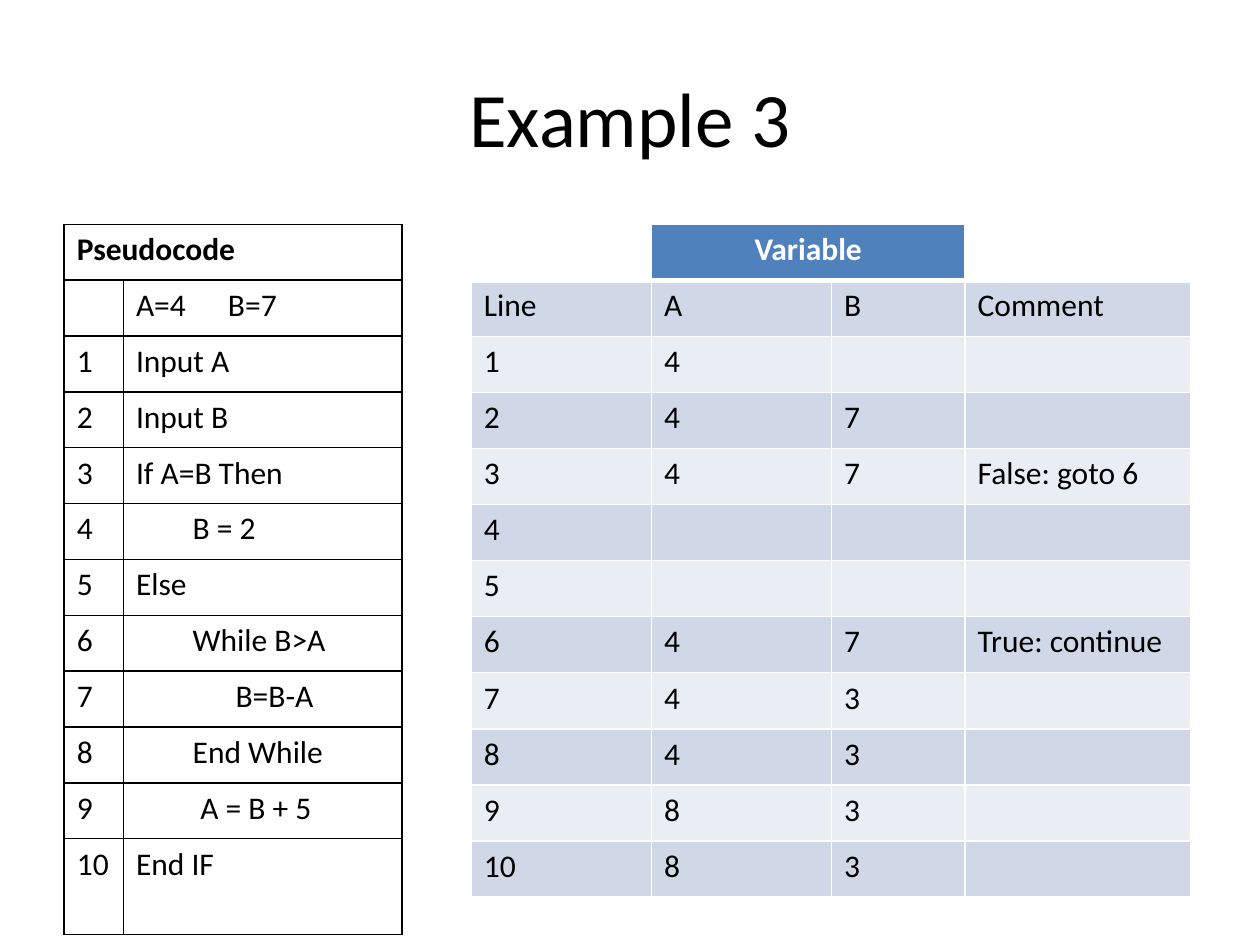
from lxml.etree import SubElement
from pptx import Presentation
from pptx.dml.color import RGBColor
from pptx.enum.text import MSO_ANCHOR, PP_ALIGN
from pptx.oxml.ns import qn
from pptx.util import Inches, Pt

FONT = "Calibri"
BLACK, WHITE, BLUE = "000000", "FFFFFF", "4F81BD"
BANDS = ["E9EDF4", "D0D8E8"]


def write(paragraph, text, size, color, bold=False):
    run = paragraph.add_run()
    run.text = text
    run.font.name, run.font.size, run.font.bold = FONT, Pt(size), bold
    run.font.color.rgb = RGBColor.from_string(color)


def paint(cell, fill, line, top=1, bottom=1):
    """Fill a cell and draw its four borders; top and bottom are widths in points."""
    cell.fill.solid()
    cell.fill.fore_color.rgb = RGBColor.from_string(fill)
    properties = cell._tc.get_or_add_tcPr()
    for place, (side, width) in enumerate([("L", 1), ("R", 1), ("T", top), ("B", bottom)]):
        border = SubElement(properties, qn(f"a:ln{side}"), w=str(Pt(width)))
        solid = SubElement(border, qn("a:solidFill"))
        SubElement(solid, qn("a:srgbClr"), val=line)
        properties.insert(place, border)  # borders come before the fill


prs = Presentation()
prs.slide_width, prs.slide_height = Inches(10), Inches(7.5)
slide = prs.slides.add_slide(prs.slide_layouts[5])

title = slide.shapes.title
title.left, title.top = Inches(0.5), Inches(0.3)
title.width, title.height = Inches(9), Inches(1.25)
title.text_frame.vertical_anchor = MSO_ANCHOR.MIDDLE
heading = title.text_frame.paragraphs[0]
heading.alignment = PP_ALIGN.CENTER
write(heading, "Example 3", 44, BLACK)

TABLES_TOP = Inches(1.78)

# Trace table: values of the variables after each line
trace = [
    ["", "Variable", "", ""],
    ["Line", "A", "B", "Comment"],
    ["1", "4", "", ""],
    ["2", "4", "7", ""],
    ["3", "4", "7", "False: goto 6"],
    ["4", "", "", ""],
    ["5", "", "", ""],
    ["6", "4", "7", "True: continue"],
    ["7", "4", "3", ""],
    ["8", "4", "3", ""],
    ["9", "8", "3", ""],
    ["10", "8", "3", ""],
]
trace_table = slide.shapes.add_table(
    len(trace), 4, Inches(3.74), TABLES_TOP, Inches(5.71), Inches(5.34)).table
for column, width in zip(trace_table.columns, [1.43, 1.43, 1.06, 1.79]):
    column.width = Inches(width)
for r, values in enumerate(trace):
    for c, value in enumerate(values):
        cell = trace_table.cell(r, c)
        if r == 0:
            paint(cell, BLUE if c in (1, 2) else WHITE, WHITE, bottom=3)
        else:
            paint(cell, BANDS[r % 2], WHITE, top=3 if r == 1 else 1)
        if value:
            write(cell.text_frame.paragraphs[0], value, 18,
                  BLACK if r else WHITE, bold=r == 0)
trace_table.cell(0, 1).merge(trace_table.cell(0, 2))
trace_table.cell(0, 1).text_frame.paragraphs[0].alignment = PP_ALIGN.CENTER

# Pseudocode: line number, statement, indent in inches
pseudocode = [
    ("Pseudocode", "", 0),
    ("", "A=4\tB=7", 0),
    ("1", "Input A", 0),
    ("2", "Input B", 0),
    ("3", "If A=B Then", 0),
    ("4", "B = 2", 0.45),
    ("5", "Else", 0),
    ("6", "While B>A", 0.45),
    ("7", "B=B-A", 0.79),
    ("8", "End While", 0.45),
    ("9", "A = B + 5", 0.51),
    ("10", "End IF", 0),
]
code_table = slide.shapes.add_table(
    len(pseudocode), 2, Inches(0.51), TABLES_TOP, Inches(2.68), Inches(5.64)).table
for column, width in zip(code_table.columns, [0.47, 2.21]):
    column.width = Inches(width)
last_height = Inches(0.76)
for row in code_table.rows:
    row.height = (Inches(5.64) - last_height) // (len(pseudocode) - 1)
code_table.rows[len(pseudocode) - 1].height = last_height
for r, (number, statement, indent) in enumerate(pseudocode):
    for c, value in enumerate([number, statement]):
        cell = code_table.cell(r, c)
        paint(cell, WHITE, BLACK)
        if value:
            write(cell.text_frame.paragraphs[0], value, 18, BLACK, bold=r == 0)
    if indent:
        properties = code_table.cell(r, 1).text_frame.paragraphs[0]._p.get_or_add_pPr()
        properties.set("marL", str(Inches(indent)))
code_table.cell(0, 0).merge(code_table.cell(0, 1))

# Tab stop between the two starting values
start_values = code_table.cell(1, 1).text_frame.paragraphs[0]._p.get_or_add_pPr()
tab_stops = SubElement(start_values, qn("a:tabLst"))
SubElement(tab_stops, qn("a:tab"), pos=str(Inches(0.73)), algn="l")

prs.save("out.pptx")
